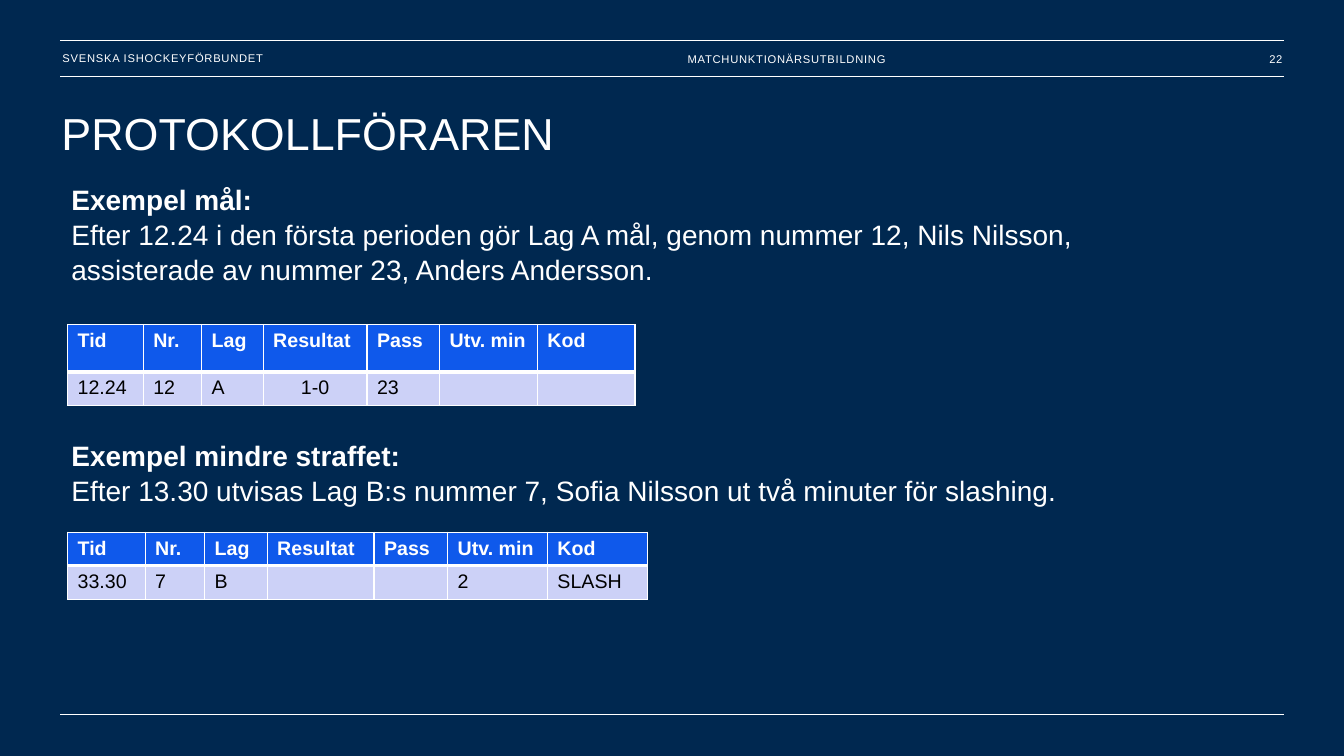
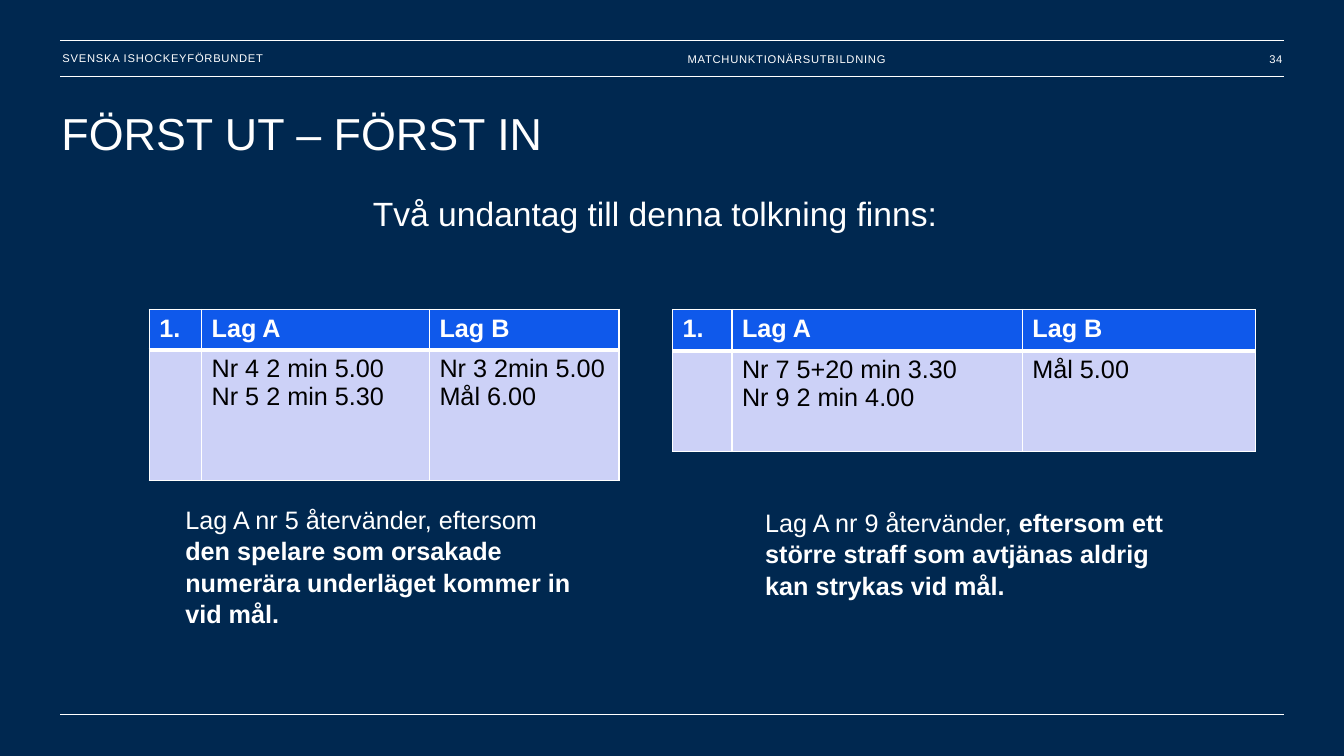
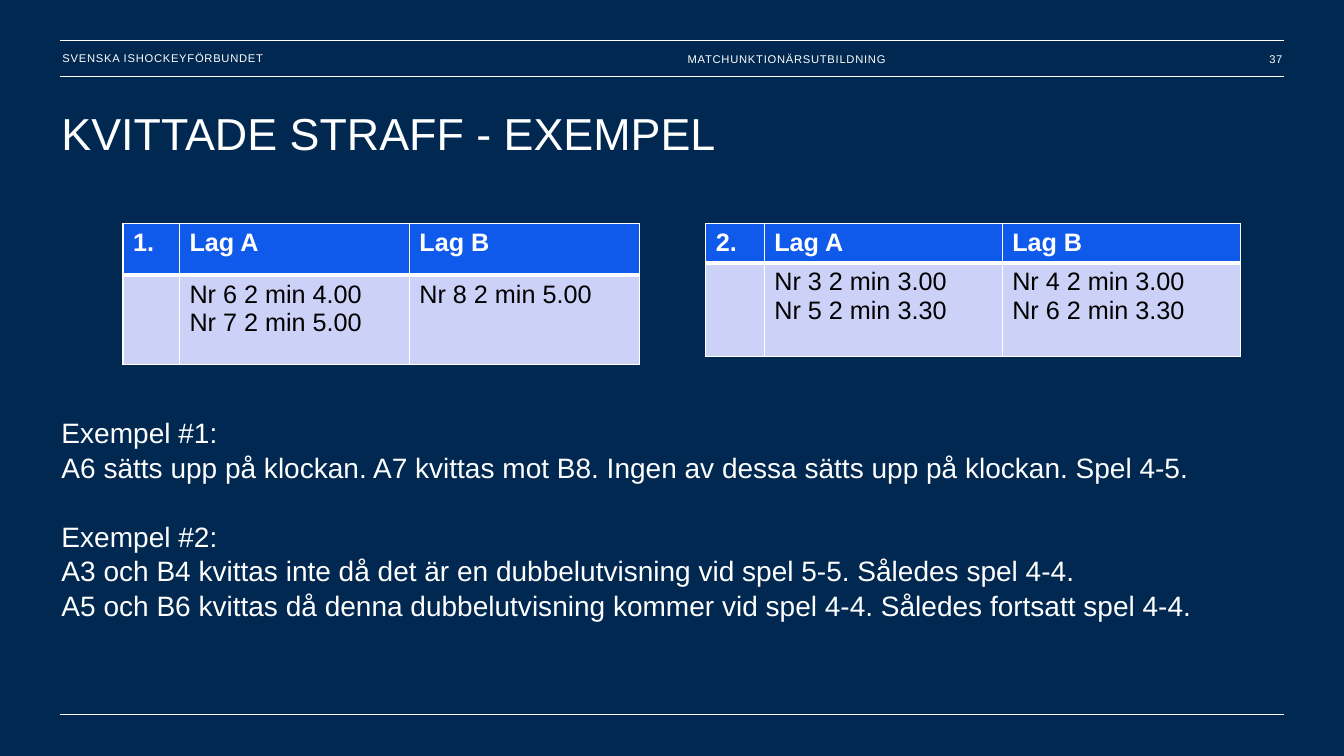
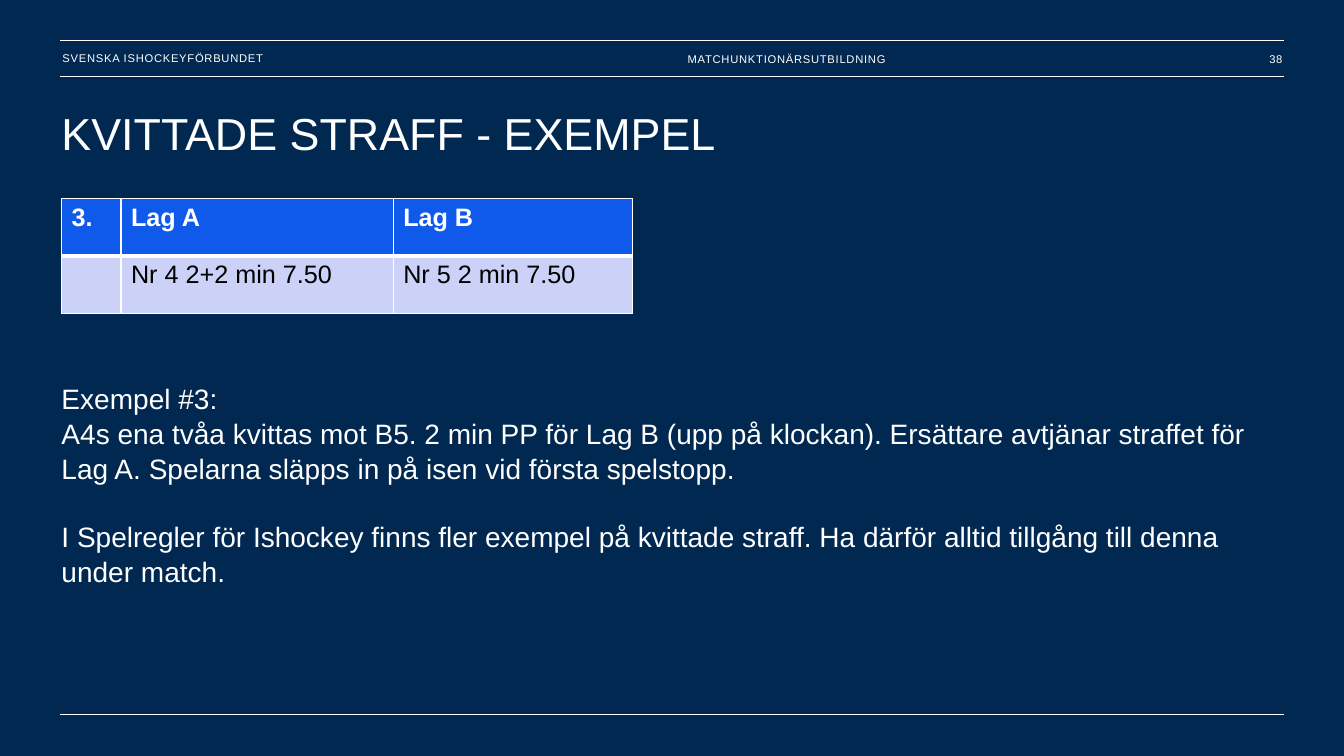
from lxml.etree import SubElement
from pptx import Presentation
from pptx.dml.color import RGBColor
from pptx.enum.shapes import MSO_CONNECTOR
from pptx.enum.text import MSO_ANCHOR, MSO_AUTO_SIZE, PP_ALIGN
from pptx.oxml.ns import qn
from pptx.util import Inches, Pt

COLORS = {
    "navy": "002850",
    "white": "FFFFFF",
    "black": "000000",
    "blue": "0F59EB",
    "lilac": "CCD1F7",
}
FONT = "Arial"
LEFT, RIGHT = 0.6, 12.73
PENALTY_COLUMNS = ["Tid", "Nr.", "Lag", "Resultat", "Pass", "Utv. min", "Kod"]


def rgb(name):
    return RGBColor.from_string(COLORS[name])


def write(tf, paragraphs, size=20, color="white", bold=False, align=PP_ALIGN.LEFT,
          line_spacing=1.04, tracking=None, gaps=None):
    for i, runs in enumerate(paragraphs):
        p = tf.paragraphs[0] if i == 0 else tf.add_paragraph()
        p.alignment = align
        p.line_spacing = line_spacing
        p.space_before = Pt((gaps or {}).get(i, 0))
        for text, run_bold in [(runs, bold)] if isinstance(runs, str) else runs:
            r = p.add_run()
            r.text = text
            r.font.name = FONT
            r.font.size = Pt(size)
            r.font.bold = run_bold
            r.font.color.rgb = rgb(color)
            if tracking:
                r._r.get_or_add_rPr().set("spc", str(tracking))


def set_frame(tf, insets, anchor=MSO_ANCHOR.TOP):
    tf.word_wrap = True
    tf.auto_size = MSO_AUTO_SIZE.NONE
    tf.vertical_anchor = anchor
    tf.margin_left, tf.margin_top, tf.margin_right, tf.margin_bottom = map(Inches, insets)


def add_text(s, box, paragraphs, insets=(0.1, 0.05, 0.1, 0.05),
             anchor=MSO_ANCHOR.TOP, **fmt):
    tf = s.shapes.add_textbox(*map(Inches, box)).text_frame
    set_frame(tf, insets, anchor)
    write(tf, paragraphs, **fmt)


def add_rule(s, y):
    line = s.shapes.add_connector(MSO_CONNECTOR.STRAIGHT, Inches(LEFT), Inches(y),
                                  Inches(RIGHT), Inches(y))
    line.line.color.rgb = rgb("white")
    line.line.width = Pt(1)
    SubElement(line._element.spPr, qn("a:effectLst"))


def add_frame(s, number):
    for y in (0.4, 0.76, 7.09):
        add_rule(s, y)
    labels = [
        ("SVENSKA ISHOCKEYFÖRBUNDET", (0.62, 0.4, 3.36, 0.35), 0, PP_ALIGN.LEFT),
        ("MATCHUNKTIONÄRSUTBILDNING", (6.82, 0.4, 3.82, 0.34), 0.04, PP_ALIGN.LEFT),
        (str(number), (11.83, 0.4, 0.89, 0.34), 0.04, PP_ALIGN.RIGHT),
    ]
    for text, box, top, align in labels:
        add_text(s, box, [text], insets=(0, top, 0, 0), anchor=MSO_ANCHOR.MIDDLE,
                 size=8, align=align, line_spacing=1.0, tracking=50)


def add_slide(prs, number, title):
    s = prs.slides.add_slide(prs.slide_layouts[5])
    sp = s.shapes.title
    sp.left, sp.top, sp.width, sp.height = map(Inches, (0.61, 1.03, 12.12, 0.6))
    set_frame(sp.text_frame, (0, 0, 0, 0))
    write(sp.text_frame, [title], size=32)
    add_frame(s, number)
    return s


def set_borders(cell, **widths):
    tcPr = cell._tc.get_or_add_tcPr()
    for side in "LRTB":
        ln = SubElement(tcPr, qn(f"a:ln{side}"), w=str(Pt(widths.get(side, 1))))
        fill = SubElement(ln, qn("a:solidFill"))
        SubElement(fill, qn("a:srgbClr"), val=COLORS["white"])


def add_table(s, left, top, widths, heights, rows, size=18, centered=()):
    box = map(Inches, (left, top, sum(widths), sum(heights)))
    table = s.shapes.add_table(len(rows), len(widths), *box).table
    table.horz_banding = False
    for column, width in zip(table.columns, widths):
        column.width = Inches(width)
    for i, (height, values) in enumerate(zip(heights, rows)):
        header = i == 0
        table.rows[i].height = Inches(height)
        for j, value in enumerate(values):
            cell = table.cell(i, j)
            set_borders(cell, **({"B": 3} if header else {"T": 3}))
            cell.fill.solid()
            cell.fill.fore_color.rgb = rgb("blue" if header else "lilac")
            if not value:
                SubElement(cell.text_frame.paragraphs[0]._p, qn("a:endParaRPr"),
                           sz=str(size * 100))
                continue
            align = PP_ALIGN.CENTER if not header and j in centered else PP_ALIGN.LEFT
            write(cell.text_frame, value.split("\n"), size=size, bold=header,
                  color="white" if header else "black", align=align, line_spacing=1.0)


def add_team_table(s, left, top, widths, heights, number, team_a, team_b):
    add_table(s, left, top, widths, heights,
              [[number, "Lag A", "Lag B"], ["", team_a, team_b]])


def add_example(s, top, heading, text):
    add_text(s, (0.61, top, 11.54, 1.2), [[(heading, True)], text])


def add_body(s, top, paragraphs, gaps):
    add_text(s, (0.61, top, 12.12, 2.2), paragraphs, insets=(0, 0, 0, 0), gaps=gaps)


def build_scorekeeper(prs):
    s = add_slide(prs, 22, "PROTOKOLLFÖRAREN")
    add_example(s, 1.75, "Exempel mål:",
                "Efter 12.24 i den första perioden gör Lag A mål, genom nummer 12, "
                "Nils Nilsson, assisterade av nummer 23, Anders Andersson.")
    add_table(s, 0.67, 3.22, [0.75, 0.58, 0.61, 1.03, 0.72, 0.97, 0.97], [0.47, 0.33],
              [PENALTY_COLUMNS, ["12.24", "12", "A", "1-0", "23", "", ""]],
              size=14, centered=(3,))
    add_example(s, 4.29, "Exempel mindre straffet:",
                "Efter 13.30 utvisas Lag B:s nummer 7, Sofia Nilsson ut två minuter "
                "för slashing.")
    add_table(s, 0.67, 5.28, [0.77, 0.59, 0.62, 1.06, 0.73, 0.99, 0.99], [0.33, 0.33],
              [PENALTY_COLUMNS, ["33.30", "7", "B", "", "", "2", "SLASH"]], size=14)


def build_first_out(prs):
    s = add_slide(prs, 34, "FÖRST UT – FÖRST IN")
    add_text(s, (3.6, 1.85, 6.27, 0.51), ["Två undantag till denna tolkning finns:"],
             size=24)
    add_team_table(s, 1.48, 3.07, [0.52, 2.26, 1.88], [0.4, 1.3], "1.",
                   "Nr 4 2 min 5.00\nNr 5 2 min 5.30", "Nr 3 2min 5.00\nMål 6.00")
    add_team_table(s, 6.67, 3.07, [0.59, 2.88, 2.31], [0.41, 1], "1.",
                   "Nr 7 5+20 min 3.30\nNr 9 2 min 4.00", "Mål 5.00")
    notes = [
        (1.74, 4.94, "Lag A nr 5 återvänder, eftersom ",
         "den spelare som orsakade numerära underläget kommer in vid mål."),
        (7.49, 4.97, "Lag A nr 9 återvänder, ",
         "eftersom ett större straff som avtjänas aldrig kan strykas vid mål."),
    ]
    for left, top, lead, reason in notes:
        add_text(s, (left, top, 4.15, 1.92), [[(lead, False), (reason, True)]], size=18)


def build_offset_pair(prs):
    s = add_slide(prs, 37, "KVITTADE STRAFF - EXEMPEL")
    add_team_table(s, 1.22, 2.22, [0.56, 2.28, 2.28], [0.51, 0.89], "1.",
                   "Nr 6 2 min 4.00\nNr 7 2 min 5.00", "Nr 8 2 min 5.00")
    add_team_table(s, 7, 2.22, [0.58, 2.36, 2.36], [0.39, 0.93], "2.",
                   "Nr 3 2 min 3.00\nNr 5 2 min 3.30", "Nr 4 2 min 3.00\nNr 6 2 min 3.30")
    add_body(s, 4.11, [
        "Exempel #1:",
        "A6 sätts upp på klockan. A7 kvittas mot B8. Ingen av dessa sätts upp på "
        "klockan. Spel 4-5.",
        "Exempel #2:",
        "A3 och B4 kvittas inte då det är en dubbelutvisning vid spel 5-5. "
        "Således spel 4-4.",
        "A5 och B6 kvittas då denna dubbelutvisning kommer vid spel 4-4. "
        "Således fortsatt spel 4-4.",
    ], gaps={2: 24})


def build_offset_double(prs):
    s = add_slide(prs, 38, "KVITTADE STRAFF - EXEMPEL")
    add_team_table(s, 0.61, 1.97, [0.59, 2.7, 2.37], [0.57, 0.57], "3.",
                   "Nr 4 2+2 min 7.50", "Nr 5 2 min 7.50")
    add_body(s, 3.77, [
        "Exempel #3:",
        "A4s ena tvåa kvittas mot B5. 2 min PP för Lag B (upp på klockan). Ersättare "
        "avtjänar straffet för Lag A. Spelarna släpps in på isen vid första spelstopp.",
        "I Spelregler för Ishockey finns fler exempel på kvittade straff. Ha därför "
        "alltid tillgång till denna under match.",
    ], gaps={2: 24})


def main():
    prs = Presentation()
    prs.slide_width, prs.slide_height = Inches(13.33), Inches(7.5)
    background = prs.slide_master.background.fill
    background.solid()
    background.fore_color.rgb = rgb("navy")
    for build in (build_scorekeeper, build_first_out, build_offset_pair,
                  build_offset_double):
        build(prs)
    prs.save("out.pptx")


if __name__ == "__main__":
    main()
